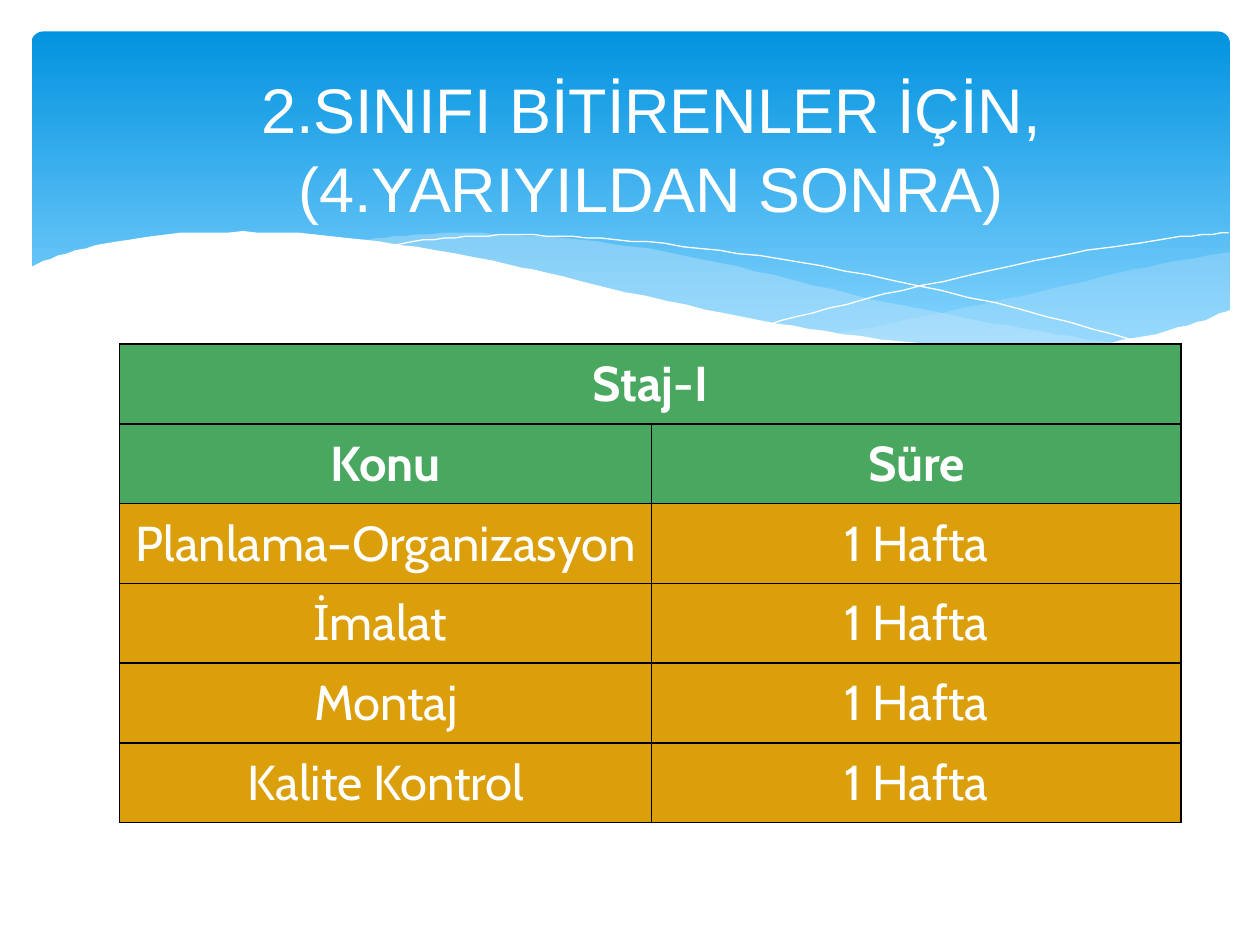
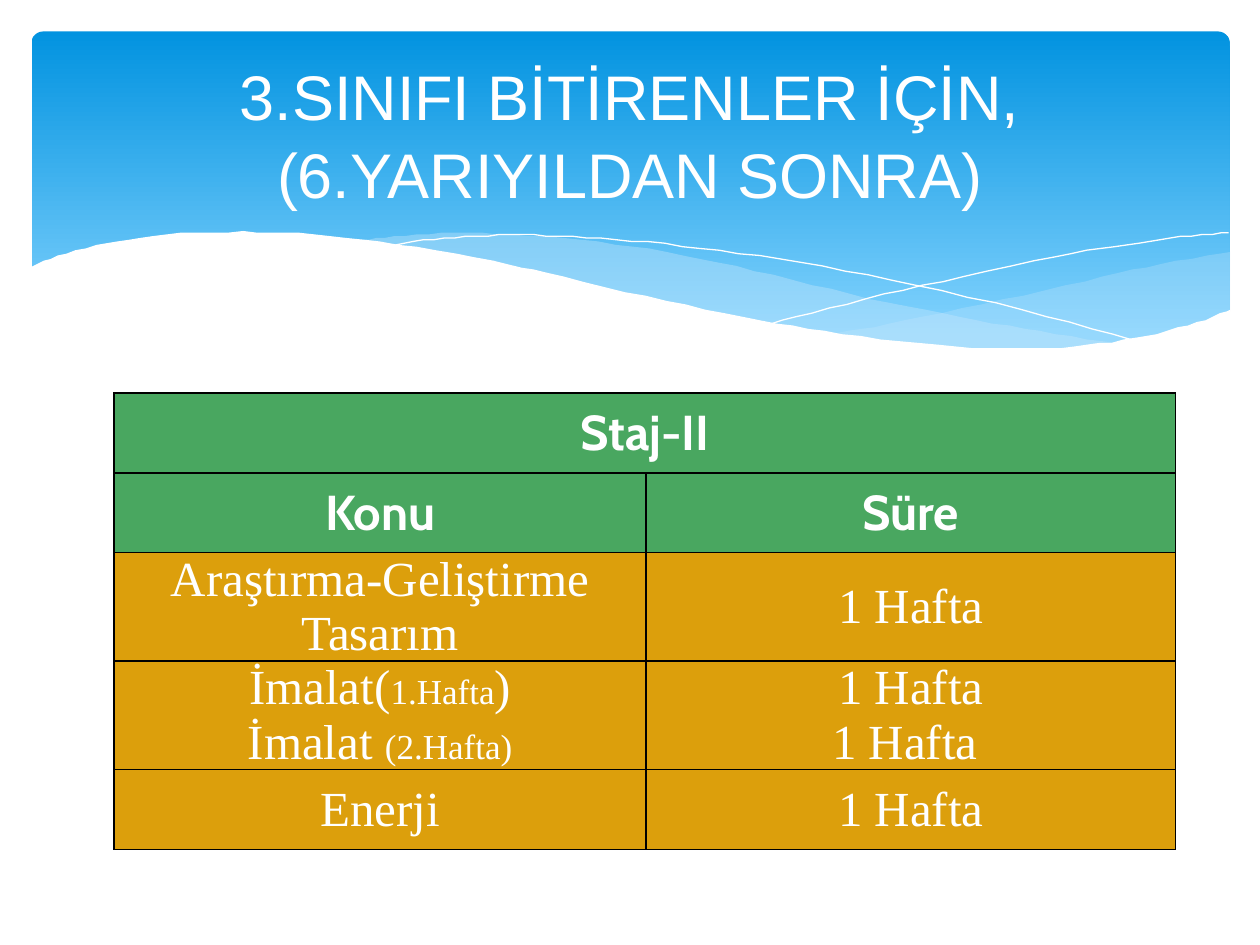
from lxml.etree import SubElement
from pptx import Presentation
from pptx.dml.color import RGBColor
from pptx.enum.shapes import MSO_SHAPE
from pptx.enum.text import MSO_ANCHOR, MSO_AUTO_SIZE, PP_ALIGN
from pptx.oxml.ns import qn
from pptx.util import Pt

COLOURS = {
    "band_top": "0293E0",
    "band_bottom": "83D3FE",
    "wave": "C6E7FC",
    "white": "FFFFFF",
    "black": "000000",
    "header": "49A760",
    "body": "DC9F0C",
}
BAND_BOX = (18, 18, 684.7, 194.4)
COLUMN_WIDTHS = (304, 302.6)
ROW_HEIGHT = 45.6
TALL_ROW_HEIGHT = 62

RIGHT_WAVE_TOP = [(684.7, 126), (645, 133), (602, 142.6), (543, 156), (490, 167), (458, 172.8)]
RIGHT_WAVE_BOTTOM = [(458, 172.8), (500, 178), (536, 181.4), (568, 182), (603, 180),
                     (634, 175.7), (660, 168.5), (684.7, 159.8)]
MIDDLE_WAVE_TOP = [(188, 119.5), (207, 117.4), (242, 115.2), (284, 116.6), (334, 121.7),
                   (382, 129.6), (435, 142), (490, 155), (540, 165), (585, 172.8), (625, 178.6)]
MIDDLE_WAVE_BOTTOM = [(625, 178.6), (593, 181.4), (555, 182), (521, 180.7), (482, 176.4),
                      (438.5, 170), (389.5, 160.6), (335.5, 149), (289, 137.5),
                      (242.6, 128), (188, 119.5)]
FALLING_LINE = [(204.5, 122.4), (230, 118.8), (261, 116.6), (294, 116.6), (334, 118.8),
                (382, 123.8), (440, 132), (505, 144.7), (580, 162.7), (635, 178)]
RISING_LINE = [(423, 167), (466, 155.5), (520.6, 142.6), (584, 129), (626, 121.7),
               (657, 117.4), (684, 115.2)]
PAGE_EDGE = [(-1.4, 135.4), (15, 128), (43, 121), (77, 116), (121, 114.5), (162, 116),
             (209.5, 121.7), (263.5, 131), (304, 140.4), (363, 154), (416, 165),
             (463, 172.8), (518, 179.3), (564.5, 181.4), (603, 179.3), (637, 174),
             (666, 166.3), (685.4, 159)]
PAGE_CORNERS = [(685.4, 219), (-1.4, 219)]

SLIDES = [
    {
        "title": "2.SINIFI BİTİRENLER İÇİN, (4.YARIYILDAN SONRA)",
        "title_box": (48.2, 38.9, 648, 89.3),
        "table_at": (68.4, 196.6),
        "body_font": "Cabin",
        "rows": [
            ("Staj-I", ""),
            ("Konu", "Süre"),
            ("Planlama–Organizasyon", "1 Hafta"),
            ("İmalat ", "1 Hafta"),
            ("Montaj", "1 Hafta"),
            ("Kalite Kontrol", "1 Hafta"),
        ],
    },
    {
        "title": "3.SINIFI BİTİRENLER İÇİN, (6.YARIYILDAN SONRA)",
        "title_box": (36, 26.6, 648, 98.6),
        "table_at": (65.2, 224.6),
        "body_font": "Times New Roman",
        "rows": [
            ("Staj-II", ""),
            ("Konu", "Süre"),
            ("Araştırma-Geliştirme\nTasarım", "1 Hafta"),
            ("İmalat(|1.Hafta|)\nİmalat |(2.Hafta)", "1 Hafta\n1 Hafta "),
            ("Enerji", "1 Hafta"),
        ],
    },
]


def colour(name):
    """Return the named colour."""
    return RGBColor.from_string(COLOURS[name])


def smooth(knots, steps=5):
    """Return points of a Catmull-Rom curve through the knots."""
    padded = [knots[0], *knots, knots[-1]]
    points = [knots[0]]
    for a, b, c, d in zip(padded, padded[1:], padded[2:], padded[3:]):
        for step in range(1, steps + 1):
            t = step / steps
            points.append(tuple(
                (2 * q + (r - p) * t + (2 * p - 5 * q + 4 * r - s) * t ** 2
                 + (3 * q - p - 3 * r + s) * t ** 3) / 2
                for p, q, r, s in zip(a, b, c, d)))
    return points


def add_outline(page, box, points, fill=None, opacity=100):
    """Draw a filled outline, or a white hairline when no fill is given."""
    placed = [(box[0] + x, box[1] + y) for x, y in points]
    builder = page.shapes.build_freeform(*placed[0], scale=Pt(1))
    builder.add_line_segments(placed[1:], close=fill is not None)
    shape = builder.convert_to_shape()
    shape.shadow.inherit = False
    if fill is None:
        shape.fill.background()
        shape.line.color.rgb = colour("white")
        shape.line.width = Pt(0)
        return
    shape.line.fill.background()
    shape.fill.solid()
    shape.fill.fore_color.rgb = colour(fill)
    if opacity < 100:
        tint = shape.fill._xPr.find(qn("a:solidFill"))[0]
        SubElement(tint, qn("a:alpha"), val=str(opacity * 1000))


def add_band(page, box):
    """Draw the gradient band with its waves and curved lower edge."""
    band = page.shapes.add_shape(MSO_SHAPE.ROUNDED_RECTANGLE, *map(Pt, box))
    band.adjustments[0] = 0.034
    band.shadow.inherit = False
    band.line.fill.background()
    band.fill.gradient()
    band.fill.gradient_angle = 270
    stops = zip(band.fill.gradient_stops, ("band_top", "band_bottom"), (0, 0.9))
    for stop, name, position in stops:
        stop.color.rgb = colour(name)
        stop.position = position
    add_outline(page, box, smooth(RIGHT_WAVE_TOP) + smooth(RIGHT_WAVE_BOTTOM), "wave", 29)
    add_outline(page, box, smooth(MIDDLE_WAVE_TOP) + smooth(MIDDLE_WAVE_BOTTOM), "wave", 40)
    add_outline(page, box, smooth(FALLING_LINE))
    add_outline(page, box, smooth(RISING_LINE))
    add_outline(page, box, smooth(PAGE_EDGE) + PAGE_CORNERS, "white")


def move_to_layout(page, layout):
    """Move the drawn shapes behind the placeholders of the layout."""
    drawn = [shape for shape in page.shapes if not shape.is_placeholder]
    for index, shape in enumerate(drawn):
        shape.element.nvSpPr.cNvPr.id = 100 + index
        layout.shapes.element.insert(2 + index, shape.element)


def style_paragraph(para, font, size, bold=False):
    """Centre a paragraph and set its white font."""
    para.alignment = PP_ALIGN.CENTER
    para.font.name = font
    para.font.size = Pt(size)
    para.font.bold = bold
    para.font.color.rgb = colour("white")


def set_title(page, text, box):
    """Place and fill the title."""
    title = page.shapes.title
    title.left, title.top, title.width, title.height = map(Pt, box)
    frame = title.text_frame
    frame.text = text
    frame.word_wrap = True
    frame.auto_size = MSO_AUTO_SIZE.NONE
    frame.vertical_anchor = MSO_ANCHOR.MIDDLE
    style_paragraph(frame.paragraphs[0], "Arial", 36)
    frame.paragraphs[0].line_spacing = 1.04


def set_borders(cell):
    """Give a cell black one-point borders."""
    properties = cell._tc.get_or_add_tcPr()
    for index, side in enumerate(("a:lnL", "a:lnR", "a:lnT", "a:lnB")):
        line = SubElement(properties, qn(side), w=str(Pt(1)))
        properties.insert(index, line)
        fill = SubElement(line, qn("a:solidFill"))
        SubElement(fill, qn("a:srgbClr"), val=COLOURS["black"])


def fill_cell(cell, text, font, header):
    """Write a cell; pieces between bars are small."""
    cell.margin_left = cell.margin_right = Pt(5)
    cell.margin_top = cell.margin_bottom = 0
    cell.vertical_anchor = MSO_ANCHOR.MIDDLE
    cell.fill.solid()
    cell.fill.fore_color.rgb = colour("header" if header else "body")
    set_borders(cell)
    for index, line in enumerate(text.split("\n")):
        frame = cell.text_frame
        para = frame.add_paragraph() if index else frame.paragraphs[0]
        style_paragraph(para, font, 28, header)
        for position, piece in enumerate(line.split("|")):
            if piece:
                span = para.add_run()
                span.text = piece
                if position % 2:
                    span.font.size = Pt(20)


def add_internship_table(page, at, rows, body_font):
    """Add the table of topics and durations."""
    heights = [TALL_ROW_HEIGHT if "\n" in row[0] else ROW_HEIGHT for row in rows]
    size = (sum(COLUMN_WIDTHS), sum(heights))
    table = page.shapes.add_table(len(rows), 2, *map(Pt, at + size)).table
    table.first_row = table.horz_banding = False
    for column, width in zip(table.columns, COLUMN_WIDTHS):
        column.width = Pt(width)
    for index, (texts, height) in enumerate(zip(rows, heights)):
        table.rows[index].height = Pt(height)
        header = index < 2
        for cell, text in zip(table.rows[index].cells, texts):
            fill_cell(cell, text, "Cabin" if header else body_font, header)
    table.cell(0, 0).merge(table.cell(0, 1))


def main():
    """Build the deck."""
    deck = Presentation()
    deck.slide_width, deck.slide_height = Pt(720), Pt(540)
    layout = deck.slide_layouts.get_by_name("Title Only")
    pages = [deck.slides.add_slide(layout) for _ in SLIDES]
    add_band(pages[0], BAND_BOX)
    move_to_layout(pages[0], layout)
    for page, content in zip(pages, SLIDES):
        set_title(page, content["title"], content["title_box"])
        add_internship_table(page, content["table_at"], content["rows"], content["body_font"])
    deck.save("out.pptx")


if __name__ == "__main__":
    main()
